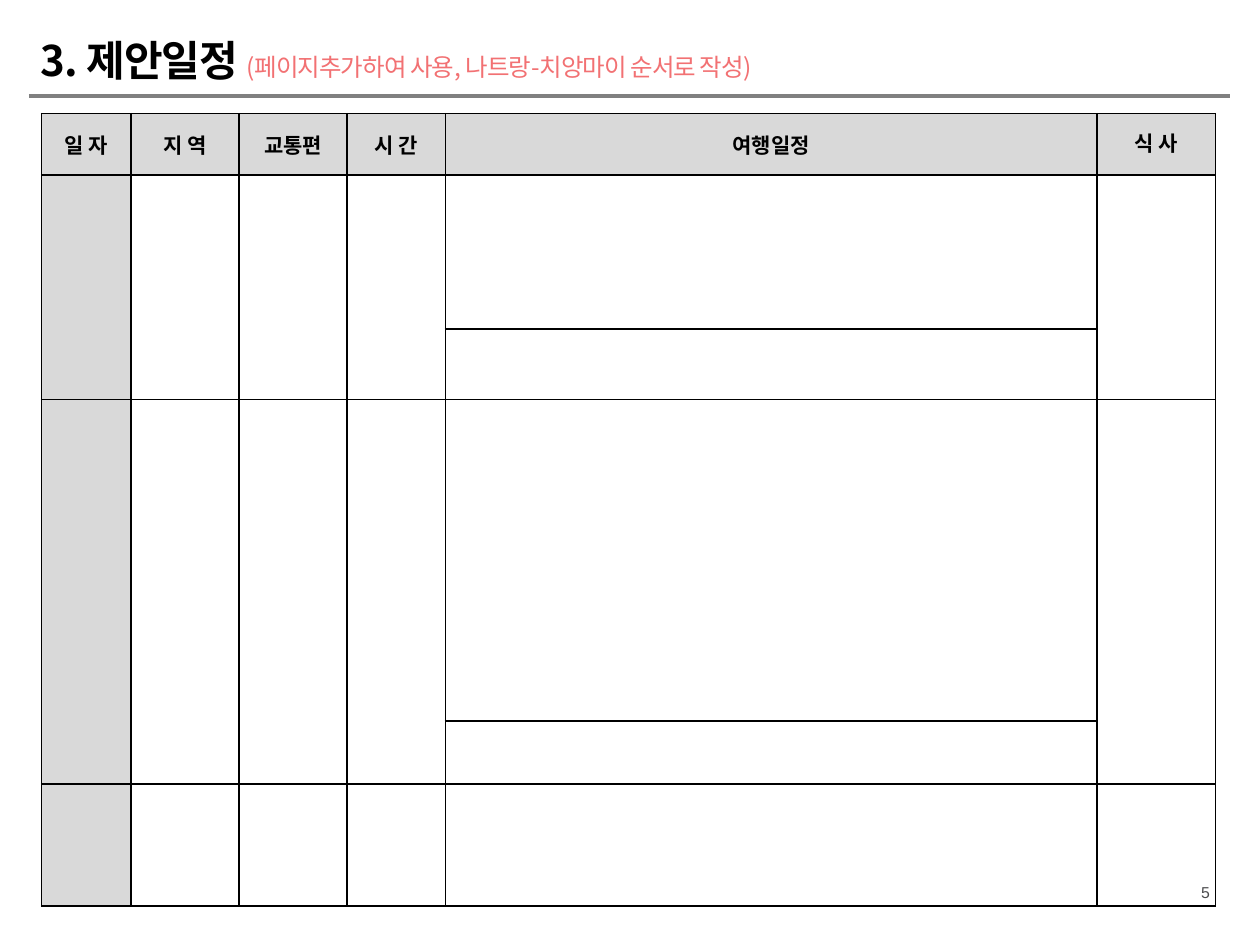
from dataclasses import dataclass
from lxml.etree import SubElement
from pptx import Presentation
from pptx.dml.color import RGBColor
from pptx.enum.shapes import MSO_CONNECTOR
from pptx.enum.text import MSO_ANCHOR, PP_ALIGN
from pptx.oxml import parse_xml
from pptx.oxml.ns import nsdecls, qn
from pptx.util import Cm, Pt


@dataclass(frozen=True)
class Theme:
    korean: str = "Noto Sans CJK KR"
    latin: str = "Arial"
    black: str = "000000"
    red: str = "F27173"
    grey: str = "808080"
    header: str = "D9D9D9"
    number: str = "4C4C4E"
    title_size: int = 24
    note_size: int = 14
    cell_size: int = 12
    number_size: int = 9


theme = Theme()


def style(font, name, size, color, bold=False, spacing=0):
    font.name = name
    font.size = Pt(size)
    font.bold = bold
    font.color.rgb = RGBColor.from_string(color)
    rPr = font._element
    rPr.set("spc", str(spacing))
    SubElement(rPr, qn("a:ea")).set("typeface", theme.korean)


def add_borders(cell):
    tcPr = cell._tc.get_or_add_tcPr()
    for i, side in enumerate(("lnL", "lnR", "lnT", "lnB")):
        tcPr.insert(i, parse_xml(
            f'<a:{side} {nsdecls("a")} w="12700"><a:solidFill>'
            f'<a:srgbClr val="{theme.black}"/></a:solidFill></a:{side}>'))


prs = Presentation()
prs.slide_width, prs.slide_height = Cm(25.4), Cm(19.05)
s = prs.slides.add_slide(prs.slide_layouts[6])

sp = s.shapes.add_textbox(Cm(23.88), Cm(17.68), Cm(0.84), Cm(0.64))
tf = sp.text_frame
tf.word_wrap = False
p = tf.paragraphs[0]
p.text = "5"
p.alignment = PP_ALIGN.CENTER
style(p.font, theme.latin, theme.number_size, theme.number, spacing=-60)

sp = s.shapes.add_textbox(Cm(0.46), Cm(0.66), Cm(22.66), Cm(1.22))
tf = sp.text_frame
tf.word_wrap = True
tf.vertical_anchor = MSO_ANCHOR.MIDDLE
tf.margin_left = Cm(0.36)
tf.margin_right = tf.margin_top = tf.margin_bottom = 0
p = tf.paragraphs[0]
p.line_spacing = 0.9
for text, size, color, bold in (
    ("3. 제안일정 ", theme.title_size, theme.black, True),
    ("(페이지추가하여 사용, 나트랑-치앙마이 순서로 작성)", theme.note_size, theme.red, False),
):
    r = p.add_run()
    r.text = text
    style(r.font, theme.korean, size, color, bold, -60)

line = s.shapes.add_connector(MSO_CONNECTOR.STRAIGHT, Cm(0.58), Cm(1.93), Cm(24.8), Cm(1.93))
line.line.color.rgb = RGBColor.from_string(theme.grey)
line.line.width = Pt(2.25)
SubElement(line._element.spPr, qn("a:effectLst"))

headers = ("일 자", "지 역", "교통편", "시 간", "여행일정", "식 사")
widths = (1.8, 2.18, 2.18, 1.98, 13.13, 2.39)
heights = (1.24, 3.1, 1.42, 6.48, 1.27, 2.46)
plan_col = headers.index("여행일정")

table = s.shapes.add_table(
    len(heights), len(widths), Cm(0.84), Cm(2.29), Cm(sum(widths)), Cm(sum(heights))).table
table.first_row = table.horz_banding = False
for column, width in zip(table.columns, widths):
    column.width = Cm(width)
for row, height in zip(table.rows, heights):
    row.height = Cm(height)

for i in range(len(heights)):
    for j in range(len(widths)):
        cell = table.cell(i, j)
        if i == 0 or j == 0:
            cell.fill.solid()
            cell.fill.fore_color.rgb = RGBColor.from_string(theme.header)
        else:
            cell.fill.background()
        add_borders(cell)

for j, text in enumerate(headers):
    cell = table.cell(0, j)
    cell.vertical_anchor = MSO_ANCHOR.MIDDLE
    p = cell.text_frame.paragraphs[0]
    p.text = text
    p.alignment = PP_ALIGN.CENTER
    p.line_spacing = Pt(15 if text == "식 사" else 17)
    style(p.font, theme.latin, theme.cell_size, theme.black, True)
    if j != plan_col:
        for top in (1, 3):
            table.cell(top, j).merge(table.cell(top + 1, j))

prs.save("out.pptx")
